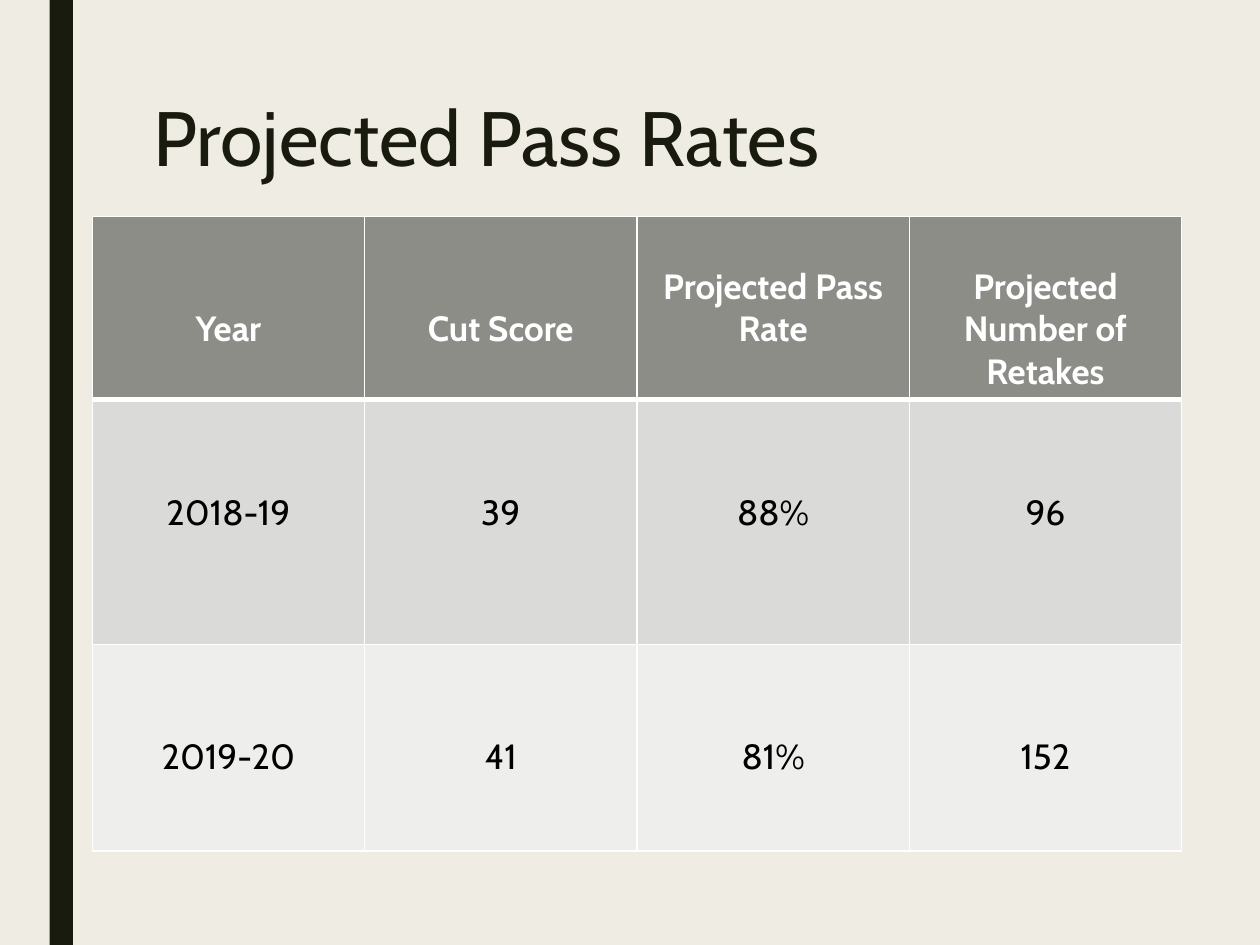
from lxml import etree
from pptx import Presentation
from pptx.dml.color import RGBColor
from pptx.enum.shapes import MSO_SHAPE
from pptx.enum.text import MSO_ANCHOR, MSO_AUTO_SIZE, PP_ALIGN
from pptx.oxml.ns import qn
from pptx.util import Cm, Pt

RECT = MSO_SHAPE.RECTANGLE
TOP = MSO_ANCHOR.TOP
LEFT, CENTER = PP_ALIGN.LEFT, PP_ALIGN.CENTER
NO_FIT = MSO_AUTO_SIZE.NONE

FONT = "Cabin"
DARK, WHITE, BLACK = "191B0E", "FFFFFF", "000000"
BACKGROUND = "EFEDE3"
ROW_FILLS = ["8C8D86", "DADBD9", "EEEEED"]
ROW_HEIGHTS = [3.68, 4.93, 4.17]
COL_WIDTH = 5.49
CELL_MARGIN, LINE_HEIGHT = 0.13, 0.86

ROWS = [
    ["Year", "Cut Score", "Projected Pass Rate", "Projected Number of Retakes"],
    ["2018-19", "39", "88%", "96"],
    ["2019-20", "41", "81%", "152"],
]


def paint(fill, color):
    fill.solid()
    fill.fore_color.rgb = RGBColor.from_string(color)


def format_text(tf, size, color, align, bold=False):
    for p in tf.paragraphs:
        p.alignment = align
        for r in p.runs:
            r.font.name = FONT
            r.font.size = Pt(size)
            r.font.bold = bold
            r.font.color.rgb = RGBColor.from_string(color)


def add_side_bar(s, height):
    bar = s.shapes.add_shape(RECT, Cm(1), 0, Cm(0.47), height)
    bar.shadow.inherit = False
    paint(bar.fill, DARK)
    bar.line.fill.background()


def set_title(s, text):
    title = s.shapes.title
    title.left, title.top = Cm(2.84), Cm(1.9)
    title.width, title.height = Cm(20.02), Cm(4.11)
    tf = title.text_frame
    tf.text = text
    tf.auto_size = NO_FIT
    tf.vertical_anchor = TOP
    tf.paragraphs[0].line_spacing = 0.89
    format_text(tf, 44, DARK, LEFT)


def set_borders(cell, bottom, top):
    """Draw white borders; must run before the cell is filled."""
    tc_pr = cell._tc.get_or_add_tcPr()
    for side, width in zip("LRTB", (1, 1, top, bottom)):
        ln = etree.SubElement(tc_pr, qn(f"a:ln{side}"), w=str(Pt(width)))
        fill = etree.SubElement(ln, qn("a:solidFill"))
        etree.SubElement(fill, qn("a:srgbClr"), val=WHITE)


def add_rates_table(s):
    n_rows, n_cols = len(ROWS), len(ROWS[0])
    table = s.shapes.add_table(n_rows, n_cols, Cm(1.86), Cm(4.36),
                               Cm(COL_WIDTH * n_cols), Cm(sum(ROW_HEIGHTS))).table
    for col in table.columns:
        col.width = Cm(COL_WIDTH)
    for i, values in enumerate(ROWS):
        table.rows[i].height = Cm(ROW_HEIGHTS[i])
        header = i == 0
        for j, value in enumerate(values):
            cell = table.cell(i, j)
            # Long headings start one line higher than the other texts
            lines_above = 1 if value.startswith("Projected") else 2
            cell.margin_top = Cm(CELL_MARGIN + lines_above * LINE_HEIGHT)
            cell.vertical_anchor = TOP
            set_borders(cell, bottom=3 if header else 1, top=3 if i == 1 else 1)
            paint(cell.fill, ROW_FILLS[i])
            cell.text_frame.text = value
            format_text(cell.text_frame, 20, WHITE if header else BLACK, CENTER, header)


def main():
    prs = Presentation()
    prs.slide_width, prs.slide_height = Cm(25.4), Cm(19.05)
    s = prs.slides.add_slide(prs.slide_layouts[5])  # Title Only
    paint(s.background.fill, BACKGROUND)
    add_side_bar(s, prs.slide_height)
    set_title(s, "Projected Pass Rates")
    add_rates_table(s)
    prs.save("out.pptx")


if __name__ == "__main__":
    main()
